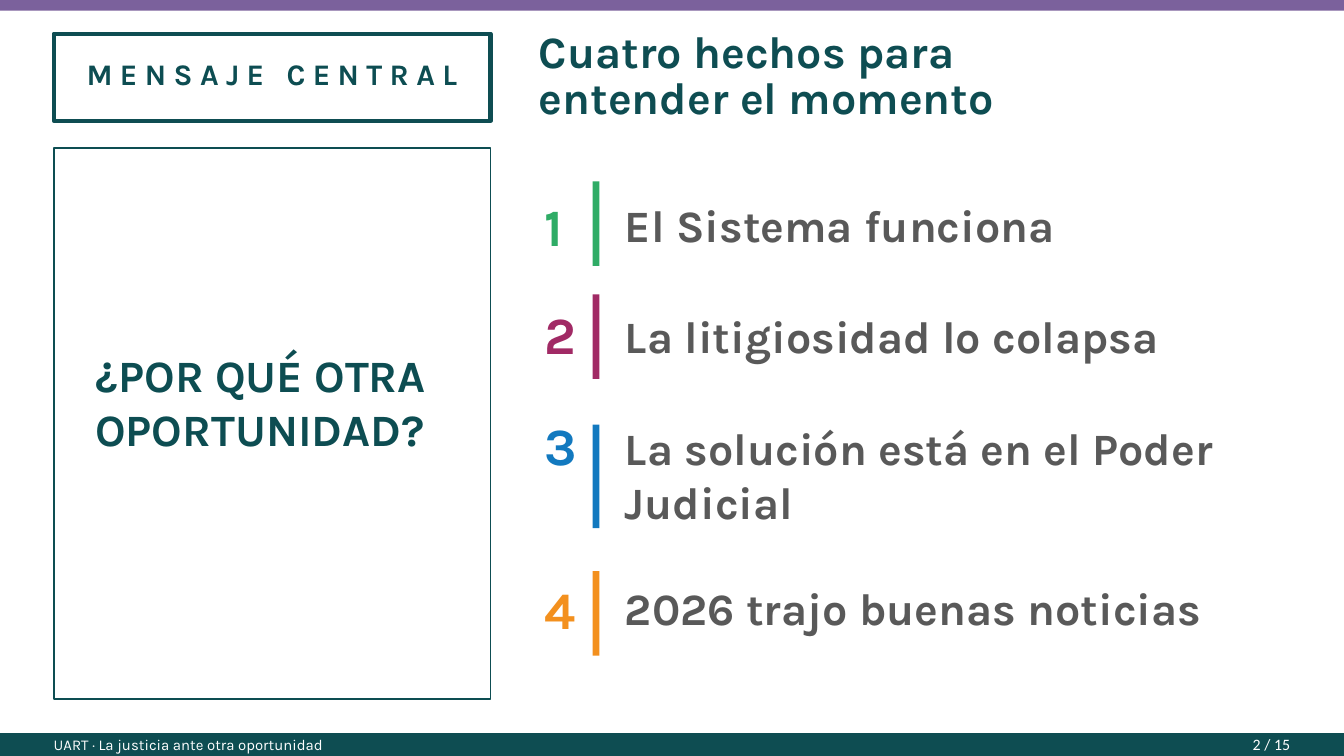
from pptx import Presentation
from pptx.dml.color import RGBColor
from pptx.enum.shapes import MSO_SHAPE
from pptx.enum.text import MSO_ANCHOR, MSO_AUTO_SIZE, PP_ALIGN
from pptx.util import Inches, Pt

TEAL = "0E4D52"
DARK = "0D4D52"
GREY = "595959"
WHITE = "FFFFFF"
FACTS = [
    ("1", "El Sistema funciona", "2FAC66", 1.35, 0.63, 1.4, 1.49),
    ("2", "La litigiosidad lo colapsa", "A12A65", 2.19, 0.63, 2.21, 2.32),
    ("3", "La solución está en el Poder Judicial", "1279BF", 3.16, 0.77, 3.03, 3.35),
    ("4", "2026 trajo buenas noticias", "F3901E", 4.25, 0.63, 4.25, 4.34),
]


def color(code):
    return RGBColor.from_string(code)


def rect(slide, box, fill=None, line=None, weight=1):
    shape = slide.shapes.add_shape(MSO_SHAPE.RECTANGLE, *map(Inches, box))
    shape.shadow.inherit = False
    if fill:
        shape.fill.solid()
        shape.fill.fore_color.rgb = color(fill)
    else:
        shape.fill.background()
    if line:
        shape.line.color.rgb = color(line)
        shape.line.width = Pt(weight)
    else:
        shape.line.fill.background()
    return shape


def write(slide, box, text, size=24, ink=DARK, bold=True, font="Karla",
          align=PP_ALIGN.LEFT, anchor=MSO_ANCHOR.MIDDLE, track=0,
          leading=None, holder=None):
    shape = holder or slide.shapes.add_textbox(0, 0, 0, 0)
    shape.left, shape.top, shape.width, shape.height = map(Inches, box)
    frame = shape.text_frame
    frame.word_wrap = True
    frame.auto_size = MSO_AUTO_SIZE.NONE
    frame.vertical_anchor = anchor
    frame.margin_left = frame.margin_right = 0
    frame.margin_top = frame.margin_bottom = 0
    frame.text = text
    for para in frame.paragraphs:
        para.alignment = align
        para.space_before = Pt(0)
        if leading:
            para.line_spacing = Pt(leading)
        for run in para.runs:
            run.font.name = font
            run.font.size = Pt(size)
            run.font.bold = bold
            run.font.color.rgb = color(ink)
            if track:
                run._r.get_or_add_rPr().set("spc", str(track * 100))


def header(slide, x, y, width):
    rect(slide, (x, y, width, 0.65), WHITE, TEAL, 2.25)
    write(slide, (x, y + 0.12, width, 0.36), "MENSAJE CENTRAL", 16,
          align=PP_ALIGN.CENTER, track=4)


def question(slide, x, y, width, height):
    rect(slide, (x, y, width, height), line=DARK)
    write(slide, (x + 0.31, y + 1.29, 2.72, 1.2), "¿POR QUÉ OTRA OPORTUNIDAD?")


def fact(slide, x, item):
    digit, text, ink, top, height, row, base = item
    write(slide, (x, row, 0.55, 0.55), digit, 28, ink)
    rect(slide, (x + 0.36, top, 0.05, height), ink)
    write(slide, (x + 0.6, base, 5.24, 0.36), text, ink=GREY)


def footer(slide, y, width):
    rect(slide, (0, y, width, 0.17), TEAL, TEAL)
    write(slide, (0.4, y - 0.01, 6, 0.18),
          "UART · La justicia ante otra oportunidad", 8, WHITE, False)
    write(slide, (width - 1.4, y - 0.01, 1, 0.18), "2 / 15", 8.5, WHITE,
          False, "Calibri", PP_ALIGN.RIGHT)


def main():
    deck = Presentation()
    deck.slide_width = Inches(10)
    deck.slide_height = deck.slide_width * 9 // 16
    slide = deck.slides.add_slide(deck.slide_layouts[5])
    write(slide, (4.01, 0.23, 6.2, 0.72),
          "Cuatro hechos para\nentender el momento", ink=TEAL,
          anchor=MSO_ANCHOR.TOP, leading=24.8, holder=slide.shapes.title)
    header(slide, 0.4, 0.25, 3.25)
    question(slide, 0.4, 1.1, 3.25, 4.1)
    for item in FACTS:
        fact(slide, 4.05, item)
    footer(slide, 5.46, 10)
    rect(slide, (0, 0, 10, 0.08), "7B619C")
    deck.save("out.pptx")


if __name__ == "__main__":
    main()
